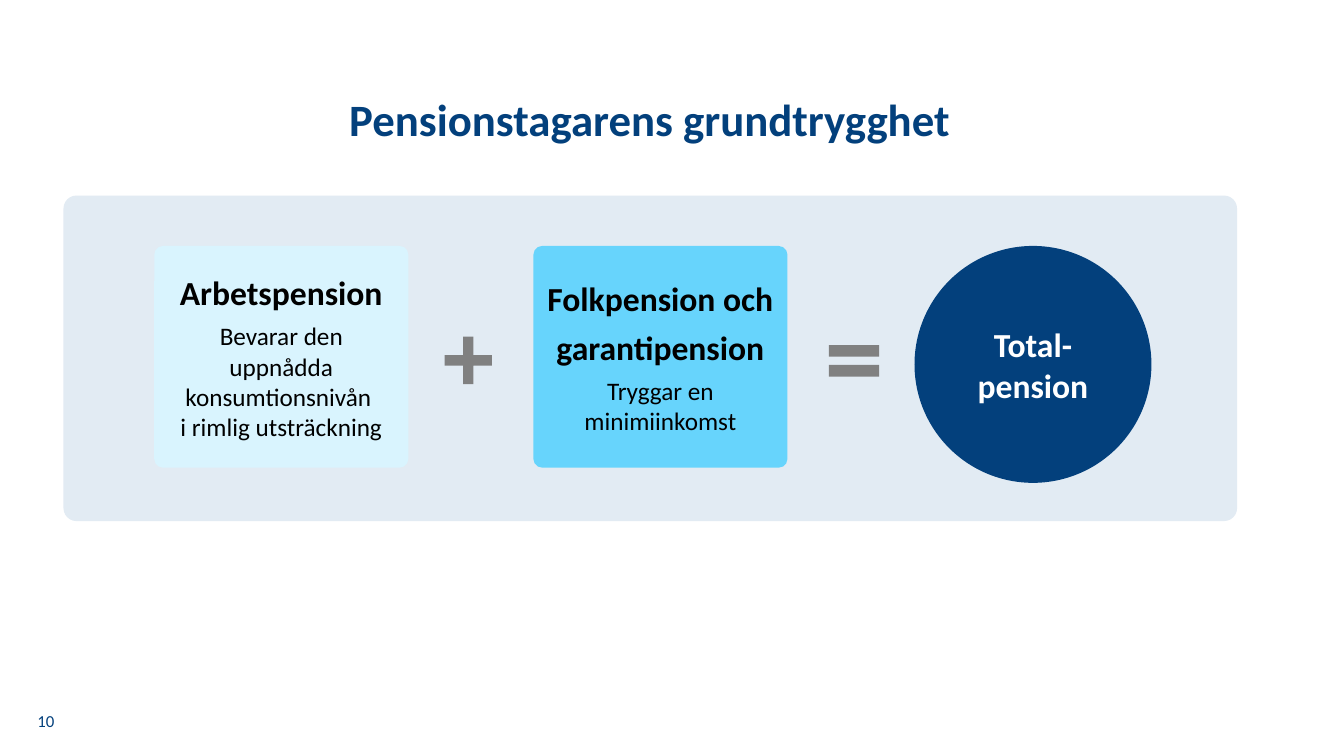
"""Build the slide on the basic security of pensioners."""
from pptx import Presentation
from pptx.dml.color import RGBColor
from pptx.enum.shapes import MSO_SHAPE
from pptx.enum.text import MSO_ANCHOR, PP_ALIGN
from pptx.util import Inches, Pt

COLORS = {"navy": "03407C", "panel": "E2EBF3", "pale": "D9F4FE",
          "sky": "67D4FC", "gray": "808080", "black": "000000", "white": "FFFFFF"}
STYLES = {
    "title": ("navy", {"size": Pt(32), "bold": True}),
    "head": ("black", {"size": Pt(24), "bold": True}),
    "body": ("black", {"size": Pt(18), "bold": False}),
    "total": ("white", {"size": Pt(24), "bold": True}),
    "number": ("navy", {"size": Pt(12), "bold": False}),
}


class Deck:
    """Hold the style and the current slide."""

    def __init__(self, font):
        self.font = font
        self.show = Presentation()
        self.show.slide_width = Inches(13.33)
        self.show.slide_height = Inches(7.5)
        self.slide = self.show.slides.add_slide(self.show.slide_layouts[6])

    def color(self, name):
        return RGBColor.from_string(COLORS[name])

    def label(self, shape, lines, anchor=MSO_ANCHOR.MIDDLE, **layout):
        frame = shape.text_frame
        frame.word_wrap = True
        frame.vertical_anchor = anchor
        for i, (text, style, after) in enumerate(lines):
            para = frame.add_paragraph() if i else frame.paragraphs[0]
            para.text = text
            form = {"alignment": PP_ALIGN.CENTER, "space_after": Pt(after), **layout}
            for key, value in form.items():
                setattr(para, key, value)
            tint, face = STYLES[style]
            for run in para.runs:
                for key, value in {"name": self.font, **face}.items():
                    setattr(run.font, key, value)
                run.font.color.rgb = self.color(tint)

    def text(self, box, lines, **layout):
        shape = self.slide.shapes.add_textbox(*map(Inches, box))
        self.label(shape, lines, **layout)

    def shape(self, kind, box, fill, adjust=(), lines=()):
        shape = self.slide.shapes.add_shape(kind, *map(Inches, box))
        shape.shadow.inherit = False
        shape.fill.solid()
        shape.fill.fore_color.rgb = self.color(fill)
        shape.line.fill.background()
        for i, value in enumerate(adjust):
            shape.adjustments[i] = value
        if lines:
            self.label(shape, lines)


def main():
    deck = Deck("Calibri")
    deck.text((0, 0.92, 12.89, 0.68), [("Pensionstagarens grundtrygghet", "title", 0)],
              anchor=MSO_ANCHOR.TOP, line_spacing=0.9)
    deck.shape(MSO_SHAPE.ROUNDED_RECTANGLE, (0.63, 1.94, 11.64, 3.23), "panel", [0.04])
    cards = [
        (1.53, "pale", [
            ("Arbetspension", "head", 6),
            ("Bevarar den uppnådda konsumtionsnivån \vi rimlig utsträckning", "body", 0)]),
        (5.29, "sky", [
            ("Folkpension och", "head", 6),
            ("garantipension", "head", 6),
            ("Tryggar en minimiinkomst", "body", 0)]),
    ]
    for left, fill, lines in cards:
        deck.shape(MSO_SHAPE.ROUNDED_RECTANGLE, (left, 2.44, 2.52, 2.2), fill, [0.04], lines)
    deck.shape(MSO_SHAPE.CROSS, (4.41, 3.34, 0.47, 0.47), "gray", [0.39])
    deck.shape(MSO_SHAPE.OVAL, (9.07, 2.44, 2.35, 2.35), "navy",
               lines=[("Total-", "total", 0), ("pension", "total", 0)])
    deck.shape(MSO_SHAPE.MATH_EQUAL, (8.13, 3.24, 0.68, 0.68), "gray", [0.17, 0.12])
    deck.text((0.2, 6.95, 0.51, 0.4), [("10", "number", 0)])
    deck.show.save("out.pptx")


if __name__ == "__main__":
    main()
